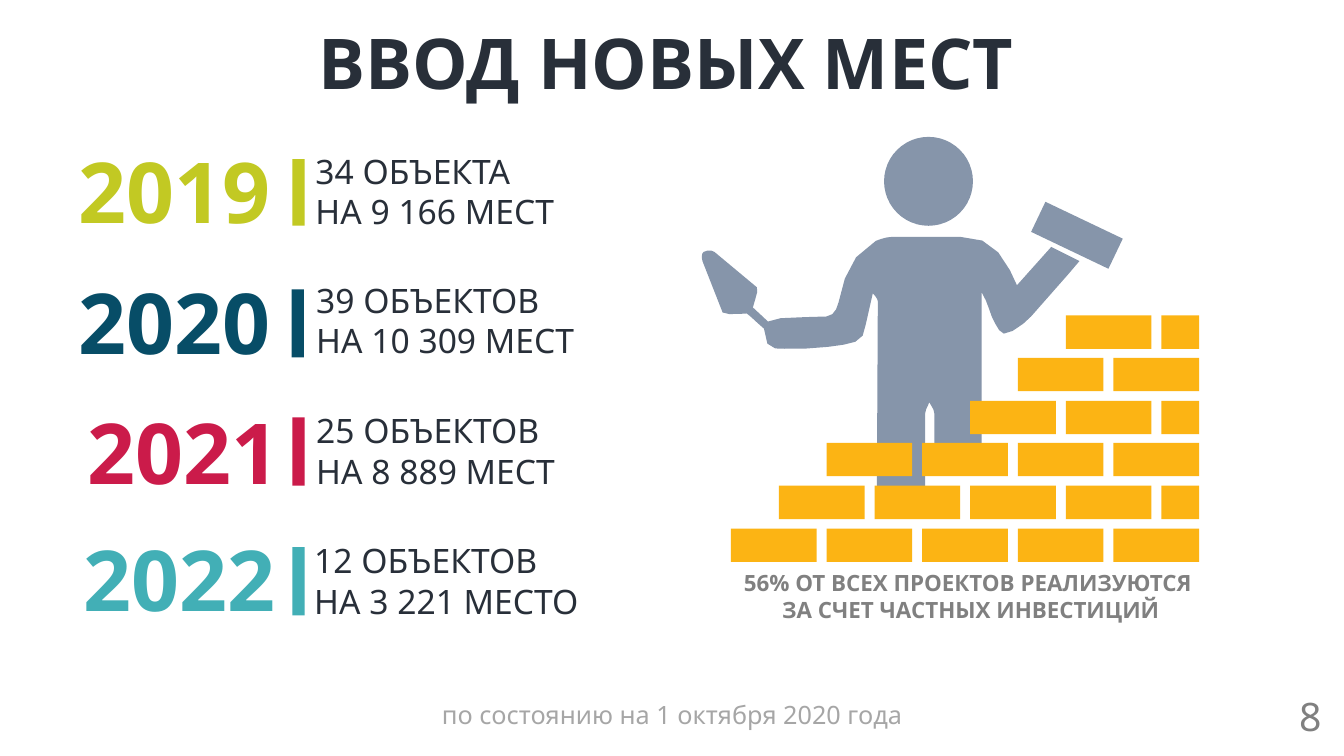
from pptx import Presentation
from pptx import util as u
from pptx.dml.color import RGBColor
from pptx.enum import shapes, text

FONT = "Noto Sans"
DARK, GREY, PALE = "282F39", "808080", "A6A6A6"
BODY, BRICK = "8695AA", "FCB414"
CENTER, LEFT = text.PP_ALIGN.CENTER, text.PP_ALIGN.LEFT
RECT, OVAL = shapes.MSO_SHAPE.RECTANGLE, shapes.MSO_SHAPE.OVAL

TITLE = ["ВВОД НОВЫХ МЕСТ"]
YEARS = [
    ("2019", "C2C923", (1.4, 3.4, 6), ["34 ОБЪЕКТА", "НА 9 166 МЕСТ"],
     (7.7, 3.68, 13.49), (7.37, 4.01, 1.68)),
    ("2020", "074D67", (1.45, 6.68, 5.89), ["39 ОБЪЕКТОВ", "НА 10 309 МЕСТ"],
     (7.72, 6.93, 11.07), (7.35, 7.29, 1.72)),
    ("2021", "CB1B4A", (1.22, 9.96, 6.81), ["25 ОБЪЕКТОВ", "НА 8 889 МЕСТ"],
     (7.72, 10.21, 11.07), (7.37, 10.52, 1.72)),
    ("2022", "42AFB6", (1.12, 13.16, 6.81), ["12 ОБЪЕКТОВ", "НА 3 221 МЕСТО"],
     (7.67, 13.49, 11.07), (7.37, 13.79, 1.72)),
]
CAPTION = ["56% ОТ ВСЕХ ПРОЕКТОВ РЕАЛИЗУЮТСЯ ", "ЗА СЧЕТ ЧАСТНЫХ ИНВЕСТИЦИЙ"]
STATUS = ["по состоянию на 1 октября 2020 года"]
PAGE = ["8"]

BRICK_ROWS = [(13.32, 5, 0), (12.24, 4, 1), (11.16, 4, 0),
              (10.1, 2, 1), (9.02, 2, 0), (7.95, 1, 1)]

FIGURE_UNIT = 0.0254
FIGURE_START = (1043, 245)
FIGURE = [
    (1009, 283), (1002, 268),
    (992, 248, 978, 234, 953, 235), (885, 235),
    (880, 235, 874, 237, 869, 239), (844, 252, 837, 276, 832, 300),
    (830, 308, 827, 313, 820, 314), (805, 315, 764, 314, 762, 319),
    (747, 305), (749, 297, 753, 288, 751, 285),
    (709, 250), (707, 248, 701, 248, 698, 250),
    (696, 251, 696, 256, 697, 259), (717, 310),
    (718, 313, 740, 311, 741, 311), (743, 312, 753, 322, 758, 326),
    (758, 348, 770, 346, 778, 346), (796, 347, 827, 344, 837, 342),
    (851, 340, 858, 336, 859, 322), (866, 291),
    (869, 294, 871, 297, 871, 299), (870, 490), (918, 490), (918, 410),
    (918, 406, 921, 403, 922, 399), (924, 403, 927, 406, 927, 410),
    (927, 448), (974, 448), (974, 290),
    (979, 298, 981, 306, 984, 314), (987, 320, 991, 330, 996, 331),
    (1002, 332, 1018, 320, 1023, 314), (1060, 272), (1071, 259),
]


def color(value):
    return RGBColor.from_string(value)


def paint(sp, fill):
    sp.shadow.inherit = False
    sp.fill.solid()
    sp.fill.fore_color.rgb = color(fill)
    sp.line.fill.background()
    return sp


def add_block(parent, kind, x, y, w, h, fill):
    box = [u.Cm(v) for v in (x, y, w, h)]
    return paint(parent.shapes.add_shape(kind, *box), fill)


def add_text(s, lines, x, y, w, h, size, fill, bold=False, align=CENTER, wrap=True):
    tf = s.shapes.add_textbox(*[u.Cm(v) for v in (x, y, w, h)]).text_frame
    tf.word_wrap = wrap
    tf.auto_size = text.MSO_AUTO_SIZE.SHAPE_TO_FIT_TEXT
    for i, line in enumerate(lines):
        p = tf.add_paragraph() if i else tf.paragraphs[0]
        p.alignment = align
        r = p.add_run()
        r.text = line
        r.font.name = FONT
        r.font.size = u.Pt(size)
        r.font.bold = bold
        r.font.color.rgb = color(fill)


def outline_points(start, parts, steps=3):
    points = [start]
    for part in parts:
        if len(part) == 2:
            points.append(part)
            continue
        ends = points[-1] + part
        for i in range(1, steps + 1):
            t = i / steps
            k = 1 - t
            weights = (k ** 3, 3 * k * k * t, 3 * k * t * t, t ** 3)
            points.append(tuple(
                sum(a * b for a, b in zip(weights, ends[axis::2]))
                for axis in (0, 1)
            ))
    return points


def add_builder(s):
    builder = s.shapes.add_group_shape()
    points = [tuple(u.Cm(v * FIGURE_UNIT) for v in pt)
              for pt in outline_points(FIGURE_START, FIGURE)]
    outline = builder.shapes.build_freeform(*points[0])
    outline.add_line_segments(points[1:], close=True)
    paint(outline.convert_to_shape(), BODY)
    add_block(builder, OVAL, 22.28, 3.45, 2.24, 2.24, BODY)
    add_block(builder, RECT, 26.06, 5.51, 2.16, 0.84, BODY).rotation = 25.5


def add_wall(s):
    wall = s.shapes.add_group_shape()
    right, step = 30.22, 2.41
    full, half, height = 2.16, 0.95, 0.84
    for y, fulls, halves in BRICK_ROWS:
        widths = [half] * halves + [full] * fulls
        x = right - widths[0]
        for w in widths:
            add_block(wall, RECT, x, y, w, height, BRICK)
            x -= step


def add_years(s):
    for year, fill, (x, y, w), lines, (lx, ly, lw), (bx, by, bh) in YEARS:
        add_text(s, [year], x, y, w, 2.82, 60, fill, bold=True)
        add_text(s, lines, lx, ly, lw, 2.31, 24, DARK, align=LEFT)
        add_block(s, RECT, bx, by, 0.31, bh, fill)


def main():
    prs = Presentation()
    prs.slide_width, prs.slide_height = u.Cm(33.87), u.Cm(19.05)
    s = prs.slides.add_slide(prs.slide_layouts[6])
    add_text(s, TITLE, 3.35, 0.37, 26.87, 2.39, 50, DARK, bold=True)
    add_builder(s)
    add_wall(s)
    add_years(s)
    add_text(s, STATUS, 0, 17.5, 33.87, 1.02, 18, PALE)
    add_text(s, CAPTION, 18.37, 14.21, 12.19, 1.63, 16, GREY, bold=True)
    add_text(s, PAGE, 32.49, 17.32, 1.07, 1.45, 28, GREY, align=LEFT, wrap=False)
    prs.save("out.pptx")


if __name__ == "__main__":
    main()
